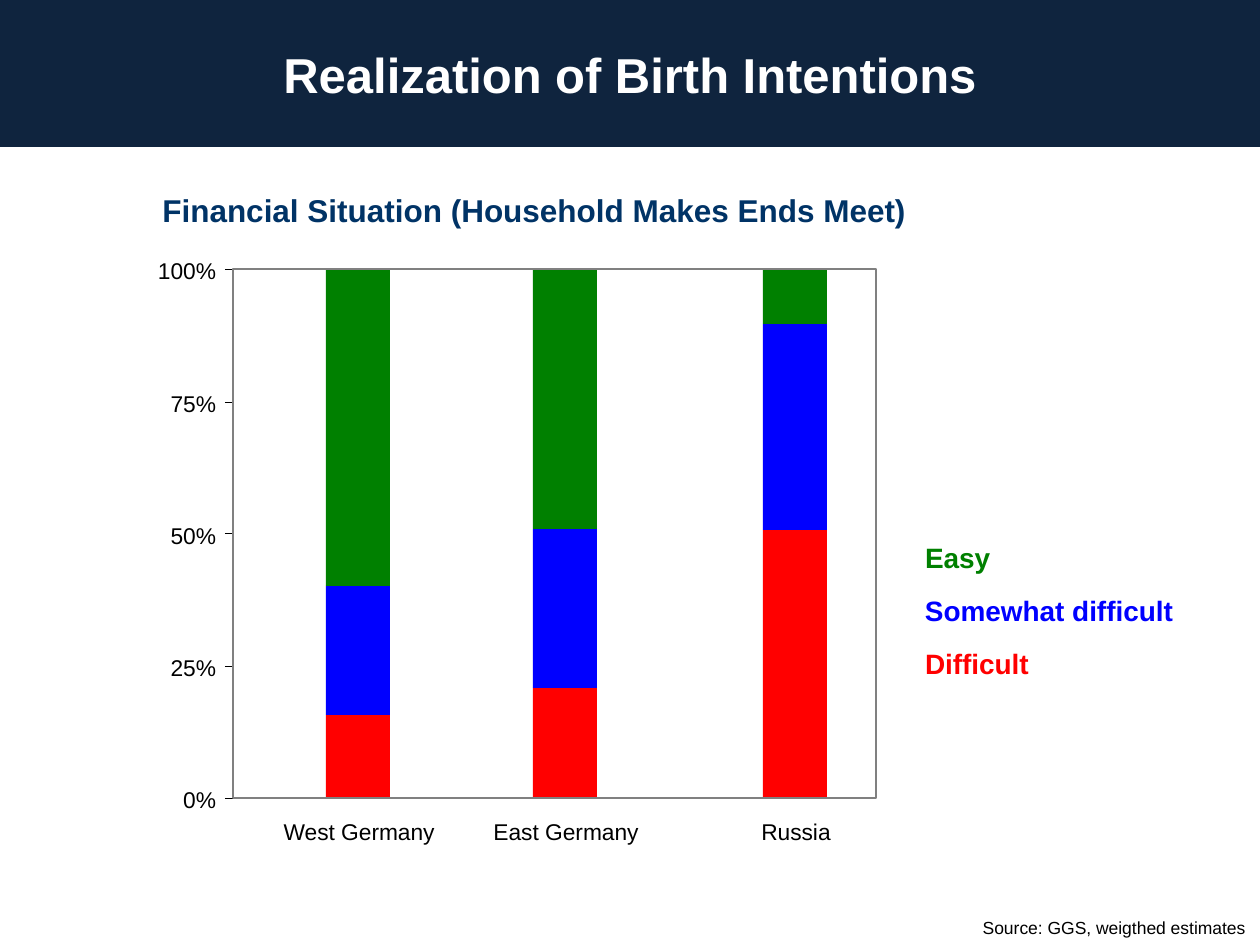
from dataclasses import dataclass

from lxml import etree
from pptx import Presentation
from pptx.dml.color import RGBColor
from pptx.enum.shapes import MSO_CONNECTOR, MSO_SHAPE
from pptx.enum.text import MSO_ANCHOR, PP_ALIGN
from pptx.oxml.ns import qn
from pptx.util import Emu, Pt

RECT, STRAIGHT = MSO_SHAPE.RECTANGLE, MSO_CONNECTOR.STRAIGHT
LEFT, CENTER, RIGHT = PP_ALIGN.LEFT, PP_ALIGN.CENTER, PP_ALIGN.RIGHT
MIDDLE = MSO_ANCHOR.MIDDLE

NAVY = RGBColor(0x0F, 0x24, 0x3E)
TITLE_BLUE = RGBColor(0x00, 0x33, 0x66)
WHITE = RGBColor(0xFF, 0xFF, 0xFF)
BLACK = RGBColor(0, 0, 0)
GRAY = RGBColor(0x80, 0x80, 0x80)
GREEN = RGBColor(0, 0x80, 0)
BLUE = RGBColor(0, 0, 0xFF)
RED = RGBColor(0xFF, 0, 0)

PX_PER_INCH = 126
PLOT_X, PLOT_Y, PLOT_W, PLOT_H = 233, 269, 643, 529
PLOT_BOTTOM = PLOT_Y + PLOT_H
BAR_W = 64
TICK = 8
LABEL_H = 28
LABEL_RIGHT = 216


@dataclass
class Box:
    x: int
    y: int
    w: int
    h: int

    def emu(self) -> list[Emu]:
        return [px(v) for v in (self.x, self.y, self.w, self.h)]


@dataclass
class Bar:
    label: str
    label_w: int
    x: int
    edges: list[int]  # y of each segment border, from bottom to top


@dataclass
class Answer:
    label: str
    w: int
    color: RGBColor


BARS = [
    Bar("West Germany", 156, 326, [PLOT_BOTTOM, 715, 586, PLOT_Y]),
    Bar("East Germany", 150, 533, [PLOT_BOTTOM, 688, 529, PLOT_Y]),
    Bar("Russia", 74, 763, [PLOT_BOTTOM, 530, 324, PLOT_Y]),
]
ANSWERS = [
    Answer("Difficult", 106, RED),
    Answer("Somewhat difficult", 251, BLUE),
    Answer("Easy", 68, GREEN),
]
TICK_LABEL_WIDTHS = {0: 36, 25: 49, 50: 49, 75: 49, 100: 62}


def px(value: int) -> Emu:
    return Emu(round(value * 914400 / PX_PER_INCH))


def write(tf, text: str, size: int, color: RGBColor, bold: bool, align) -> None:
    p = tf.paragraphs[0]
    p.alignment = align
    r = p.add_run()
    r.text = text
    font = {"name": "Arial", "size": Pt(size), "bold": bold}
    for name, value in font.items():
        setattr(r.font, name, value)
    r.font.color.rgb = color


def add_text(s, box: Box, text: str, size: int, color: RGBColor = BLACK,
             bold: bool = False, align=LEFT, inset: bool = False) -> None:
    tf = s.shapes.add_textbox(*box.emu()).text_frame
    tf.word_wrap = False
    if not inset:
        for side in ("left", "top", "right", "bottom"):
            setattr(tf, f"margin_{side}", 0)
    write(tf, text, size, color, bold, align)


def add_rect(s, box: Box, fill: RGBColor | None = None, line: RGBColor | None = None):
    sp = s.shapes.add_shape(RECT, *box.emu())
    sp.shadow.inherit = False
    if fill is None:
        sp.fill.background()
    else:
        sp.fill.solid()
        sp.fill.fore_color.rgb = fill
    if line is None:
        sp.line.fill.background()
    else:
        sp.line.color.rgb = line
        sp.line.width = Pt(0.75)
    return sp


def add_line(s, x1: int, y1: int, x2: int, y2: int):
    """Draw a black hairline."""
    line = s.shapes.add_connector(STRAIGHT, px(x1), px(y1), px(x2), px(y2))
    line.line.color.rgb = BLACK
    line.line.width = Pt(0.25)
    etree.SubElement(line._element.spPr, qn("a:effectLst"))
    return line


def add_bars(s) -> None:
    for i, answer in enumerate(ANSWERS):
        for bar in BARS:
            bottom, top = bar.edges[i:i + 2]
            add_rect(s, Box(bar.x, top, BAR_W, bottom - top), answer.color)
    for bar in BARS:
        x = bar.x + (BAR_W - bar.label_w) // 2 + 1
        add_text(s, Box(x, 818, bar.label_w, LABEL_H), bar.label, 13, align=CENTER)


def add_axes(s) -> None:
    add_line(s, PLOT_X, PLOT_Y, PLOT_X, PLOT_BOTTOM)
    add_line(s, PLOT_X, PLOT_BOTTOM, PLOT_X + PLOT_W, PLOT_BOTTOM)
    ticks = {}
    for percent, w in TICK_LABEL_WIDTHS.items():
        y = PLOT_BOTTOM - PLOT_H * percent // 100
        ticks[percent] = add_line(s, PLOT_X - TICK, y, PLOT_X, y)
        add_text(s, Box(LABEL_RIGHT - w, y - 12, w, LABEL_H), f"{percent}%", 13,
                 align=RIGHT)
    frame = add_rect(s, Box(PLOT_X, PLOT_Y, PLOT_W, PLOT_H), line=GRAY)
    ticks[50].end_connect(frame, 1)
    ticks[50].begin_y = ticks[50].end_y


def add_legend(s) -> None:
    for i, answer in enumerate(reversed(ANSWERS)):
        add_text(s, Box(925, 541 + 53 * i, answer.w, 34), answer.label, 16,
                 answer.color, bold=True)


def add_title(s) -> None:
    sp = add_rect(s, Box(0, 0, 1260, 147), NAVY)
    sp.text_frame.vertical_anchor = MIDDLE
    write(sp.text_frame, "Realization of Birth Intentions", 28, WHITE, True, CENTER)


def main() -> None:
    prs = Presentation()
    prs.slide_width, prs.slide_height = px(1260), px(945)
    s = prs.slides.add_slide(prs.slide_layouts[6])
    add_text(s, Box(150, 185, 769, 50), "Financial Situation (Household Makes Ends Meet)",
             18, TITLE_BLUE, bold=True, inset=True)
    add_text(s, Box(970, 911, 288, 34), "Source: GGS, weigthed estimates", 10,
             align=CENTER, inset=True)
    add_bars(s)
    add_axes(s)
    add_legend(s)
    add_title(s)
    prs.save("out.pptx")


if __name__ == "__main__":
    main()
